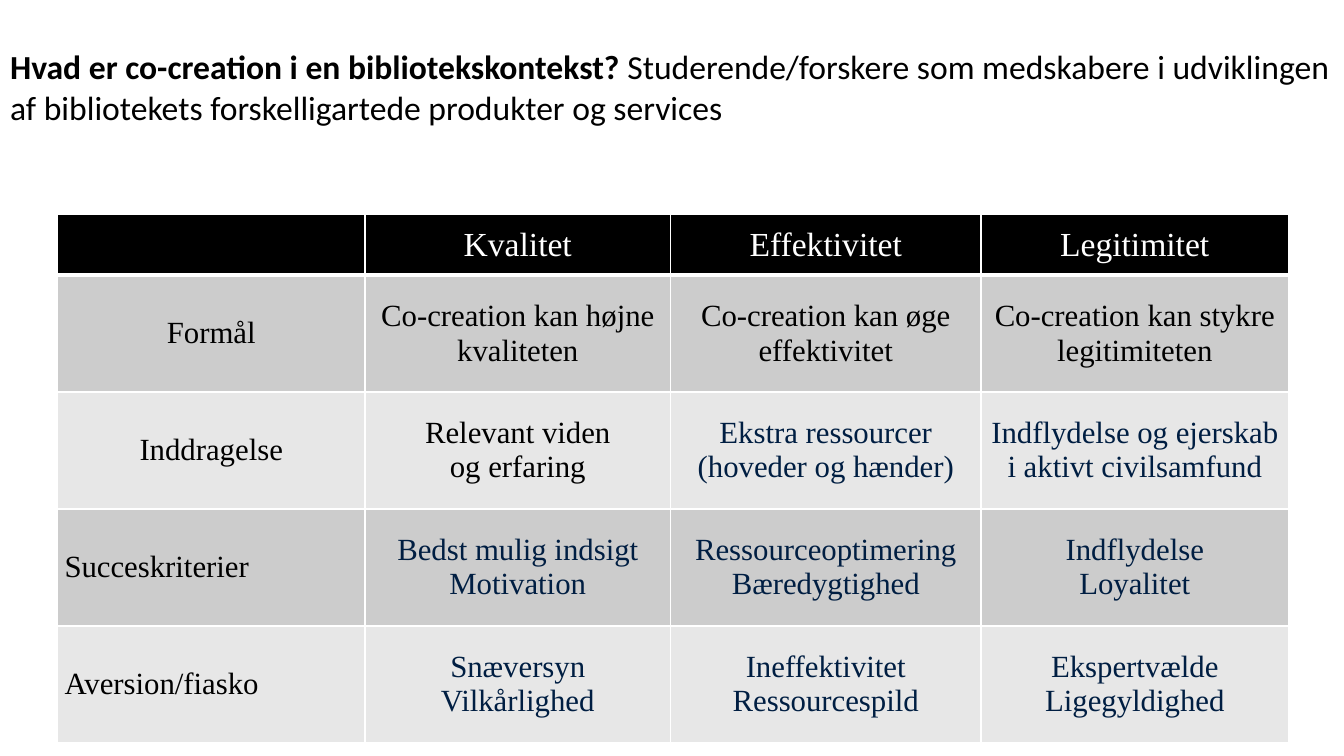
import pptx
import pptx.dml.color
import pptx.enum.text
import pptx.oxml
import pptx.oxml.ns
import pptx.util
from pptx.util import Inches

THEME = {
    "black": "000000",
    "white": "FFFFFF",
    "navy": "001E42",
    "bands": ["CCCCCC", "E7E7E7"],
    "title_font": "Calibri",
    "table_font": "Times New Roman",
    "title_size": 24,
    "header_size": 24,
    "body_size": 22,
}


def style_font(font, name, size, color):
    font.name = name
    font.size = pptx.util.Pt(size)
    font.color.rgb = pptx.dml.color.RGBColor.from_string(color)


def add_border(cell, side, width):
    cell._tc.get_or_add_tcPr().append(pptx.oxml.parse_xml(
        f'<a:ln{side} {pptx.oxml.ns.nsdecls("a")} w="{pptx.util.Pt(width)}">'
        f'<a:solidFill><a:srgbClr val="{THEME["white"]}"/></a:solidFill></a:ln{side}>'))


align = pptx.enum.text.PP_ALIGN
middle = pptx.enum.text.MSO_ANCHOR.MIDDLE

prs = pptx.Presentation()
prs.slide_width, prs.slide_height = Inches(13.33), Inches(7.5)
s = prs.slides.add_slide(prs.slide_layouts[5])

title = s.shapes.title
title.left, title.top = Inches(0), Inches(0)
title.width, title.height = Inches(13.33), Inches(1.72)
tf = title.text_frame
tf.word_wrap = True
tf.vertical_anchor = middle
p = tf.paragraphs[0]
p.alignment = align.LEFT
style_font(p.font, THEME["title_font"], THEME["title_size"], THEME["black"])
for text, bold in [
    ("Hvad er co-creation i en bibliotekskontekst?", True),
    (" Studerende/forskere som medskabere i udviklingen af bibliotekets "
     "forskelligartede produkter og services", False),
]:
    r = p.add_run()
    r.text = text
    r.font.bold = bold

rows = [
    ["", "Kvalitet", "Effektivitet", "Legitimitet"],
    ["Formål", "Co-creation kan højne kvaliteten",
     "Co-creation kan øge effektivitet", "Co-creation kan stykre legitimiteten"],
    ["Inddragelse", "Relevant viden\nog erfaring",
     "Ekstra ressourcer (hoveder og hænder)",
     "Indflydelse og ejerskab i aktivt civilsamfund"],
    ["Succeskriterier", "Bedst mulig indsigt\nMotivation",
     "Ressourceoptimering\nBæredygtighed", "Indflydelse\nLoyalitet"],
    ["Aversion/fiasko", "Snæversyn\nVilkårlighed",
     "Ineffektivitet\nRessourcespild", "Ekspertvælde\nLigegyldighed"],
]
col_widths = [3.05, 3.03, 3.08, 3.05]
row_heights = [0.6] + [1.16] * 4

table = s.shapes.add_table(len(rows), len(col_widths), Inches(0.57), Inches(2.13),
                           Inches(sum(col_widths)), Inches(sum(row_heights))).table
table.first_row = False
table.horz_banding = False
for col, width in zip(table.columns, col_widths):
    col.width = Inches(width)
for row, height in zip(table.rows, row_heights):
    row.height = Inches(height)

for i, texts in enumerate(rows):
    header = i == 0
    fill = THEME["black"] if header else THEME["bands"][(i - 1) % 2]
    size = THEME["header_size"] if header else THEME["body_size"]
    for j, text in enumerate(texts):
        cell = table.cell(i, j)
        wide = i < 2 or (i == 2 and j < 2)
        cell.margin_left = cell.margin_right = Inches(0.13 if wide else 0.07)
        cell.margin_top = cell.margin_bottom = Inches(0.07 if wide else 0.04)
        cell.vertical_anchor = middle
        for side in "LRTB":
            add_border(cell, side, 3 if header and side == "B" else 1)
        cell.fill.solid()
        cell.fill.fore_color.rgb = pptx.dml.color.RGBColor.from_string(fill)
        if header:
            color = THEME["white"]
        else:
            color = THEME["black"] if wide or j == 0 else THEME["navy"]
        cell.text = text
        for p in cell.text_frame.paragraphs:
            p.alignment = align.LEFT if j == 0 and i > 2 else align.CENTER
            style_font(p.font, THEME["table_font"], size, color)

prs.save("out.pptx")
